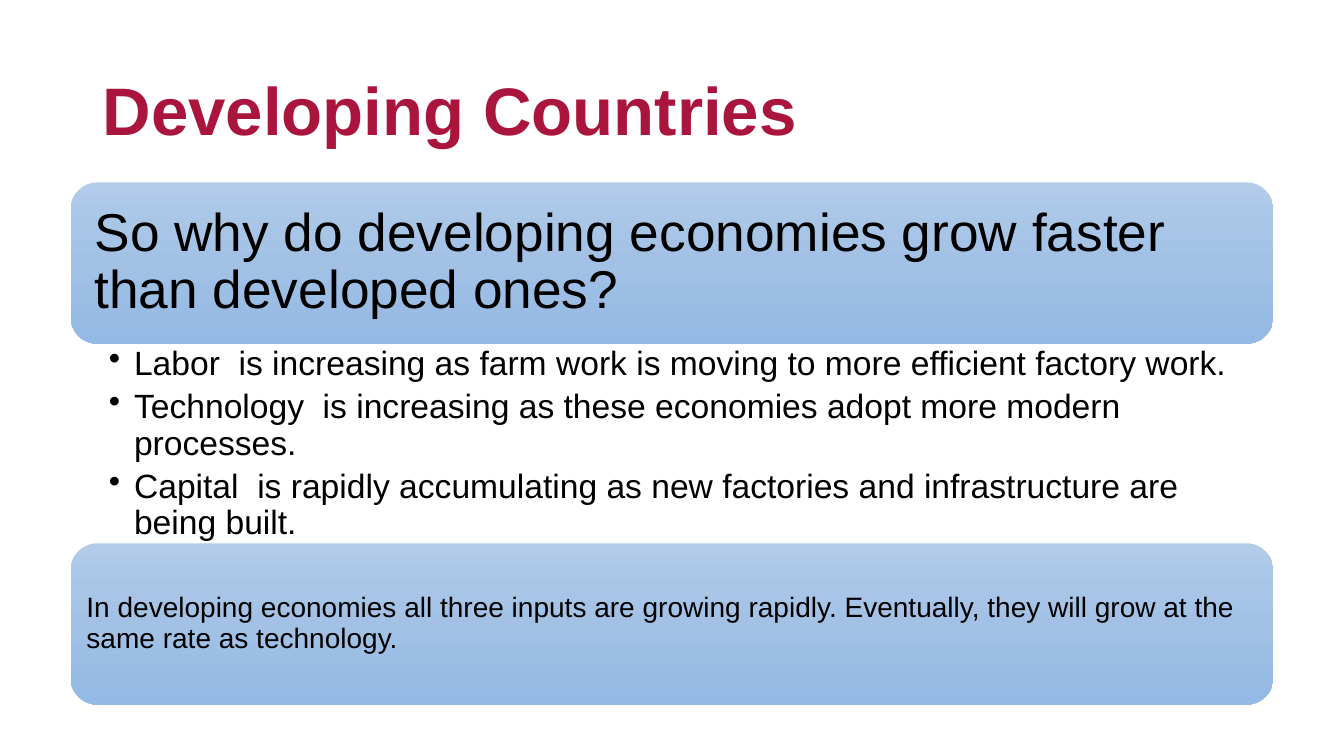
import copy

import pptx
import pptx.dml.color
import pptx.enum.shapes
import pptx.enum.text
import pptx.oxml
import pptx.oxml.ns
import pptx.util

Inches = pptx.util.Inches
Pt = pptx.util.Pt
RGBColor = pptx.dml.color.RGBColor
qn = pptx.oxml.ns.qn
MIDDLE = pptx.enum.text.MSO_ANCHOR.MIDDLE
TOP = pptx.enum.text.MSO_ANCHOR.TOP

CRIMSON = RGBColor(0xAA, 0x15, 0x3D)
BLACK = RGBColor(0x00, 0x00, 0x00)
BLUES = [
    RGBColor(0xB1, 0xCB, 0xE9),
    RGBColor(0xA3, 0xC1, 0xE5),
    RGBColor(0x93, 0xB9, 0xE4),
]

LEFT, WIDTH = 0.7, 11.93
PANEL_HEIGHT = 1.6
QUESTION_TOP, CONCLUSION_TOP = 1.81, 5.39
QUESTION = "So why do developing economies grow faster than developed ones?"
CONCLUSION = (
    "In developing economies all three inputs are growing rapidly. "
    "Eventually, they will grow at the same rate as technology."
)
INPUTS = [
    "Labor  is increasing as farm work is moving to more efficient factory work.",
    "Technology  is increasing as these economies adopt more modern processes.",
    "Capital  is rapidly accumulating as new factories and infrastructure are being built.",
]


class Deck:
    font_name = "Arial"
    line_spacing = 0.9

    def __init__(self, width, height):
        self.prs = pptx.Presentation()
        self.prs.slide_width = Inches(width)
        self.prs.slide_height = Inches(height)
        self.s = self.prs.slides.add_slide(self.prs.slide_layouts[6])

    def apply(self, target, values):
        for name, value in values.items():
            setattr(target, name, value)

    def fill_text(self, sp, lines, size, insets, anchor, color=BLACK, bold=False, gap=0):
        tf = sp.text_frame
        left, top, right, bottom = map(Inches, insets)
        self.apply(tf, {
            "word_wrap": True, "vertical_anchor": anchor,
            "margin_left": left, "margin_top": top,
            "margin_right": right, "margin_bottom": bottom,
        })
        for i, line in enumerate(lines):
            p = tf.paragraphs[0] if i == 0 else tf.add_paragraph()
            self.apply(p, {
                "alignment": pptx.enum.text.PP_ALIGN.LEFT,
                "line_spacing": self.line_spacing, "space_after": Pt(gap),
            })
            r = p.add_run()
            self.apply(r, {"text": line})
            self.apply(r.font, {"name": self.font_name, "size": Pt(size), "bold": bold})
            r.font.color.rgb = color
        return tf

    def text(self, box, lines, size, insets, anchor, **style):
        sp = self.s.shapes.add_textbox(*map(Inches, box))
        return self.fill_text(sp, lines, size, insets, anchor, **style)

    def bullets(self, box, lines, size, insets):
        tf = self.text(box, lines, size, insets, TOP, gap=0.2 * size)
        for p in tf.paragraphs:
            pPr = p._p.get_or_add_pPr()
            pPr.set("marL", str(Inches(0.25)))
            pPr.set("indent", str(-Inches(0.25)))
            bullet = pptx.oxml.parse_xml(
                '<a:buChar xmlns:a="http://schemas.openxmlformats.org/drawingml/2006/main" char="•"/>'
            )
            pPr.append(bullet)

    def panel(self, top, line, size, inset):
        sp = self.s.shapes.add_shape(
            pptx.enum.shapes.MSO_SHAPE.ROUNDED_RECTANGLE,
            *map(Inches, (LEFT, top, WIDTH, PANEL_HEIGHT)),
        )
        sp.shadow.inherit = False
        sp.line.fill.background()
        sp.fill.gradient()
        sp.fill.gradient_angle = 270
        gsLst = sp._element.spPr.find(".//" + qn("a:gsLst"))
        gsLst.insert(1, copy.deepcopy(gsLst[0]))
        for i, (stop, color) in enumerate(zip(sp.fill.gradient_stops, BLUES)):
            stop.position = i / (len(BLUES) - 1)
            stop.color.rgb = color
        self.fill_text(sp, [line], size, [inset] * 4, MIDDLE)


def main():
    deck = Deck(13.33, 7.5)
    deck.text((0.92, 0.4, 9.71, 1.45), ["Developing Countries"], 48,
              (0.1, 0.05, 0.1, 0.05), MIDDLE, color=CRIMSON, bold=True)
    deck.panel(QUESTION_TOP, QUESTION, 38, 0.16)
    inputs_top = QUESTION_TOP + PANEL_HEIGHT
    deck.bullets((LEFT, inputs_top, WIDTH, CONCLUSION_TOP - inputs_top),
                 INPUTS, 24, (0.38, 0.03, 0.19, 0.03))
    deck.panel(CONCLUSION_TOP, CONCLUSION, 20, 0.08)
    deck.prs.save("out.pptx")


if __name__ == "__main__":
    main()
